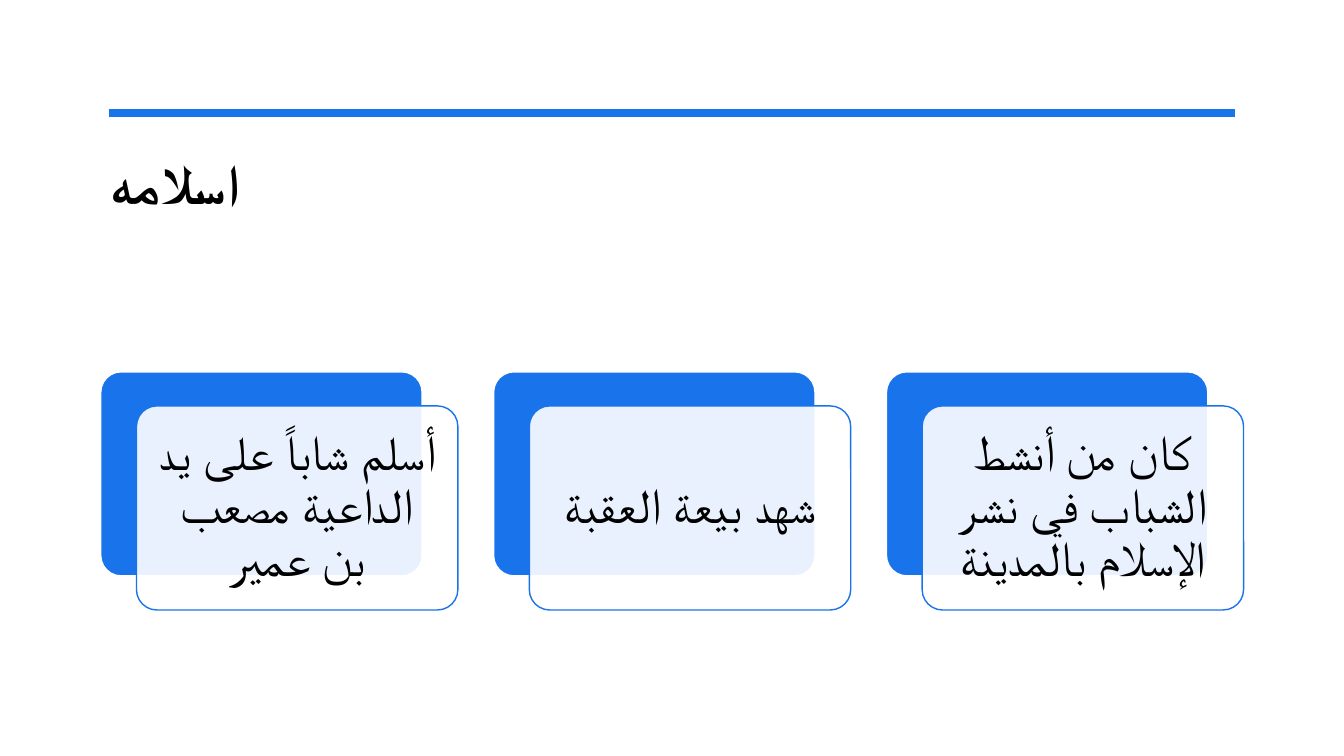
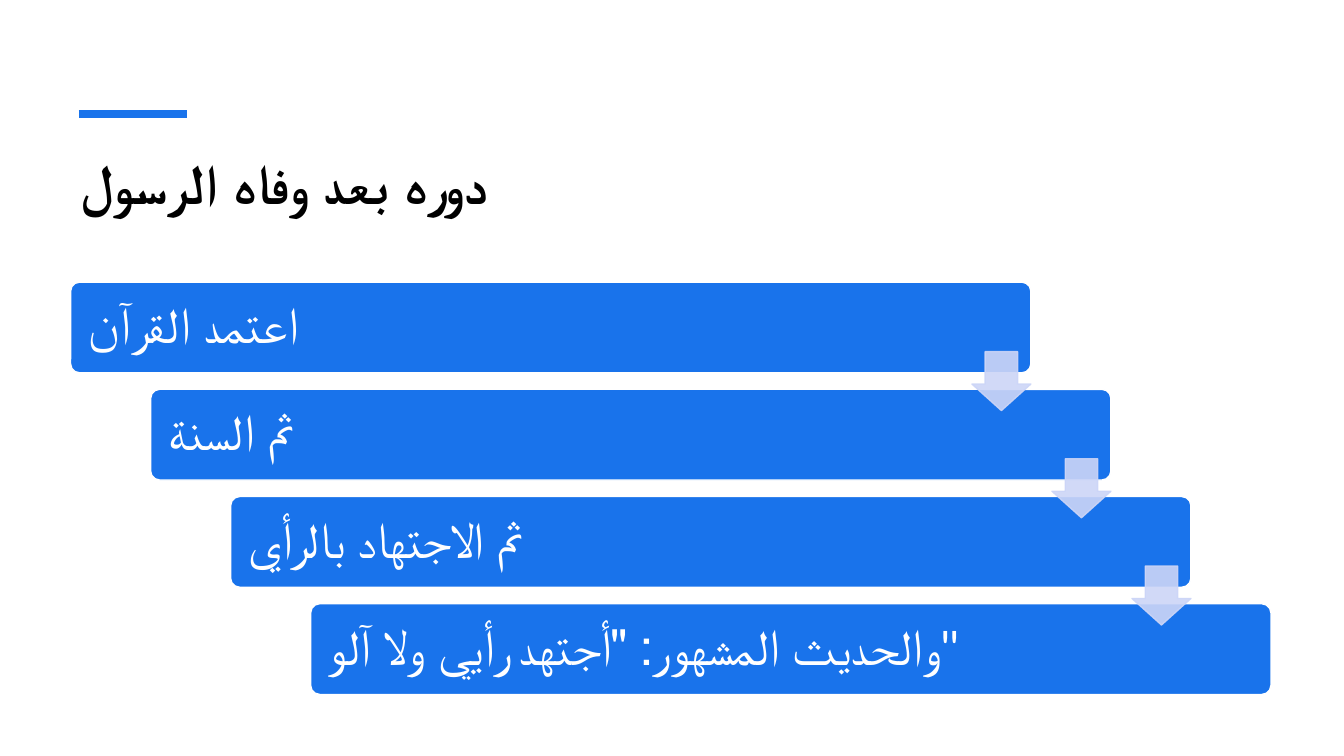
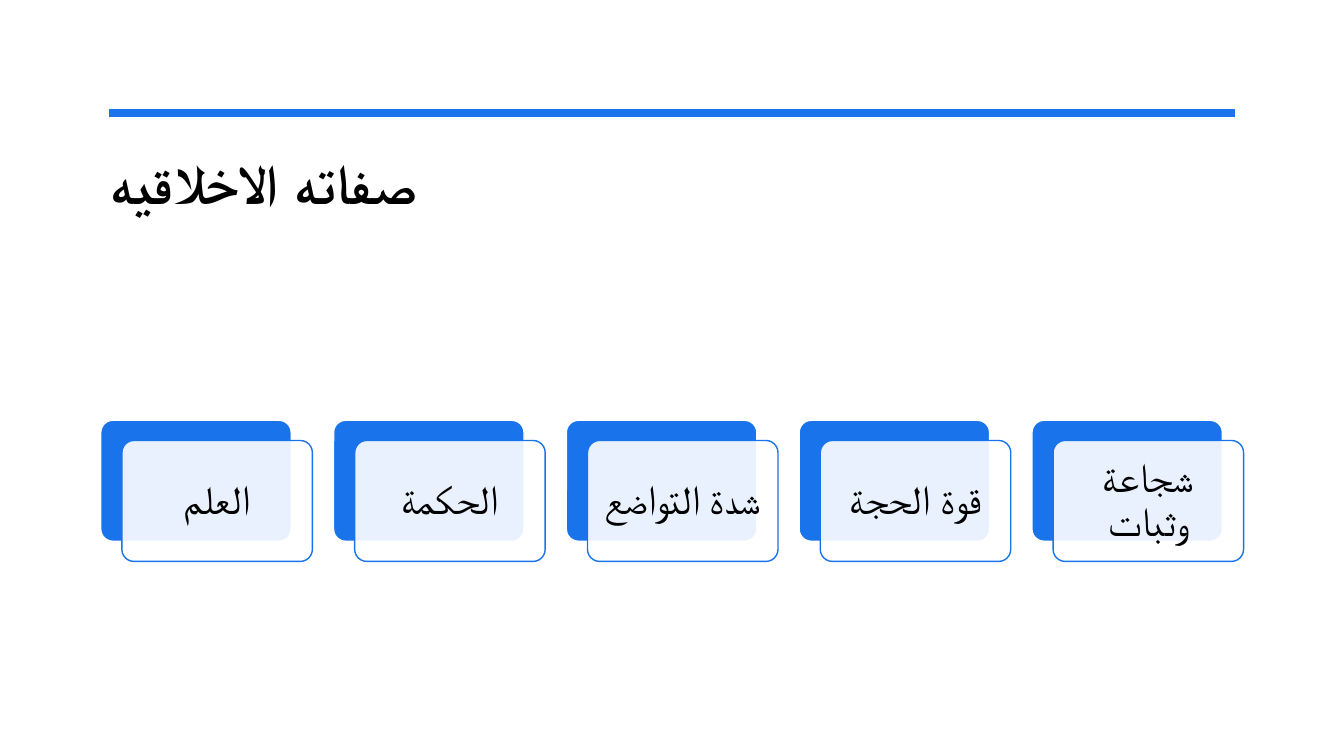
from lxml.etree import SubElement
from pptx import Presentation
from pptx.dml.color import RGBColor
from pptx.enum.shapes import MSO_CONNECTOR as Link, MSO_SHAPE as Kind
from pptx.enum.text import MSO_ANCHOR as Anchor, PP_ALIGN as Align
from pptx.oxml.ns import qn
from pptx.util import Cm, Pt

BLUE, PALE, WHITE, BLACK = "1973EB", "CCD5F7", "FFFFFF", "000000"
FONT = "Calibri"


def rgb(code):
    return RGBColor.from_string(code)


def fade(shape, query):
    """Make the colours that the query finds 90 % opaque."""
    for color in shape.element.spPr.xpath(query):
        SubElement(color, qn("a:alpha"), val="90000")


def write(shape, text, size, color, bold=False, align=Align.LEFT,
          anchor=Anchor.MIDDLE, inset=None):
    frame = shape.text_frame
    look = {"word_wrap": True, "vertical_anchor": anchor}
    if inset is not None:
        sides = ("left", "top", "right", "bottom")
        look.update({f"margin_{side}": Cm(inset) for side in sides})
    for name, value in look.items():
        setattr(frame, name, value)
    para = frame.paragraphs[0]
    para.alignment, para.line_spacing = align, 0.9
    run = para.add_run()
    run.text = text
    for name, value in {"name": FONT, "size": Pt(size), "bold": bold}.items():
        setattr(run.font, name, value)
    run.font.color.rgb = rgb(color)


def add_form(slide, kind, box, fill, line, adjust):
    shape = slide.shapes.add_shape(kind, *map(Cm, box))
    shape.shadow.inherit = False
    shape.fill.solid()
    shape.fill.fore_color.rgb = rgb(fill)
    shape.line.color.rgb = rgb(line)
    shape.line.width = Pt(1)
    for i, value in enumerate(adjust):
        shape.adjustments[i] = value
    return shape


def add_page(deck, text, box, rule):
    """Add a slide with its title and the blue rule (left, right, y) above it."""
    slide = deck.slides.add_slide(deck.slide_layouts[5])
    title = slide.shapes.title
    for name, value in zip(("left", "top", "width", "height"), box):
        setattr(title, name, Cm(value))
    write(title, text, 40, BLACK, bold=True, anchor=Anchor.TOP)
    left, right, y = map(Cm, rule)
    line = slide.shapes.add_connector(Link.STRAIGHT, left, y, right, y)
    line.line.color.rgb = rgb(BLUE)
    line.line.width = Pt(6)
    SubElement(line.element.spPr, qn("a:effectLst"))
    return slide


def add_cards(slide, box, texts, size, inset):
    """Fill the box's width with layered cards, centred in its height."""
    left, top, width, height = box
    wide = width * 9 / (11 * len(texts) - 1)
    high, shift, drop = wide * 0.635, wide / 9, wide * 0.106
    y = top + (height - high - drop) / 2
    for i, text in enumerate(texts):
        x = left + i * 11 * shift
        add_form(slide, Kind.ROUNDED_RECTANGLE, (x, y, wide, high),
                 BLUE, WHITE, [0.1])
        card = add_form(slide, Kind.ROUNDED_RECTANGLE,
                        (x + shift, y + drop, wide, high), WHITE, BLUE, [0.1])
        fade(card, "./a:solidFill/a:srgbClr")
        write(card, text, size, BLACK, align=Align.CENTER, inset=inset)


def add_steps(slide, box, texts):
    """Lay bars as a stair across the box, with an arrow over each gap."""
    left, top, width, height = box
    wide, high = width * 0.8, height * 0.22
    last = len(texts) - 1
    across, down = (width - wide) / last, (height - high) / last
    for i, text in enumerate(texts):
        bar = add_form(slide, Kind.ROUNDED_RECTANGLE,
                       (left + i * across, top + i * down, wide, high),
                       BLUE, WHITE, [0.1])
        write(bar, text, 36, WHITE, inset=0.38)
    side = high * 0.65
    for i in range(last):
        x = left + i * across + wide - side
        y = top + i * down + (high + down - side) / 2
        arrow = add_form(slide, Kind.DOWN_ARROW, (x, y, side, side),
                         PALE, PALE, [0.55, 0.45])
        fade(arrow, ".//a:srgbClr")


def main():
    deck = Presentation()
    deck.slide_width, deck.slide_height = Cm(33.87), Cm(19.05)
    head, rule = (2.54, 3.81, 28.78, 3.18), (2.74, 31.12, 2.85)
    body = (2.54, 7.37, 28.8, 10)

    page = add_page(deck, "اسلامه", head, rule)
    add_cards(page, body, [
        "أسلم شاباً على يد الداعية مصعب بن عمير",
        "شهد بيعة العقبة",
        "كان من أنشط الشباب في نشر الإسلام بالمدينة",
    ], 35, 0.38)

    page = add_page(deck, "دوره بعد وفاه الرسول",
                    (1.78, 3.81, 30.25, 3.05), (1.99, 4.71, 2.87))
    add_steps(page, (1.78, 7.11, 30.25, 10.39), [
        "اعتمد القرآن",
        "ثم السنة",
        "ثم الاجتهاد بالرأي",
        'والحديث المشهور: "أجتهد رأيي ولا آلو"',
    ])

    page = add_page(deck, "صفاته الاخلاقيه", head, rule)
    add_cards(page, body, [
        "العلم", "الحكمة", "شدة التواضع", "قوة الحجة", "شجاعة وثبات",
    ], 29, 0.3)

    deck.save("out.pptx")


if __name__ == "__main__":
    main()
